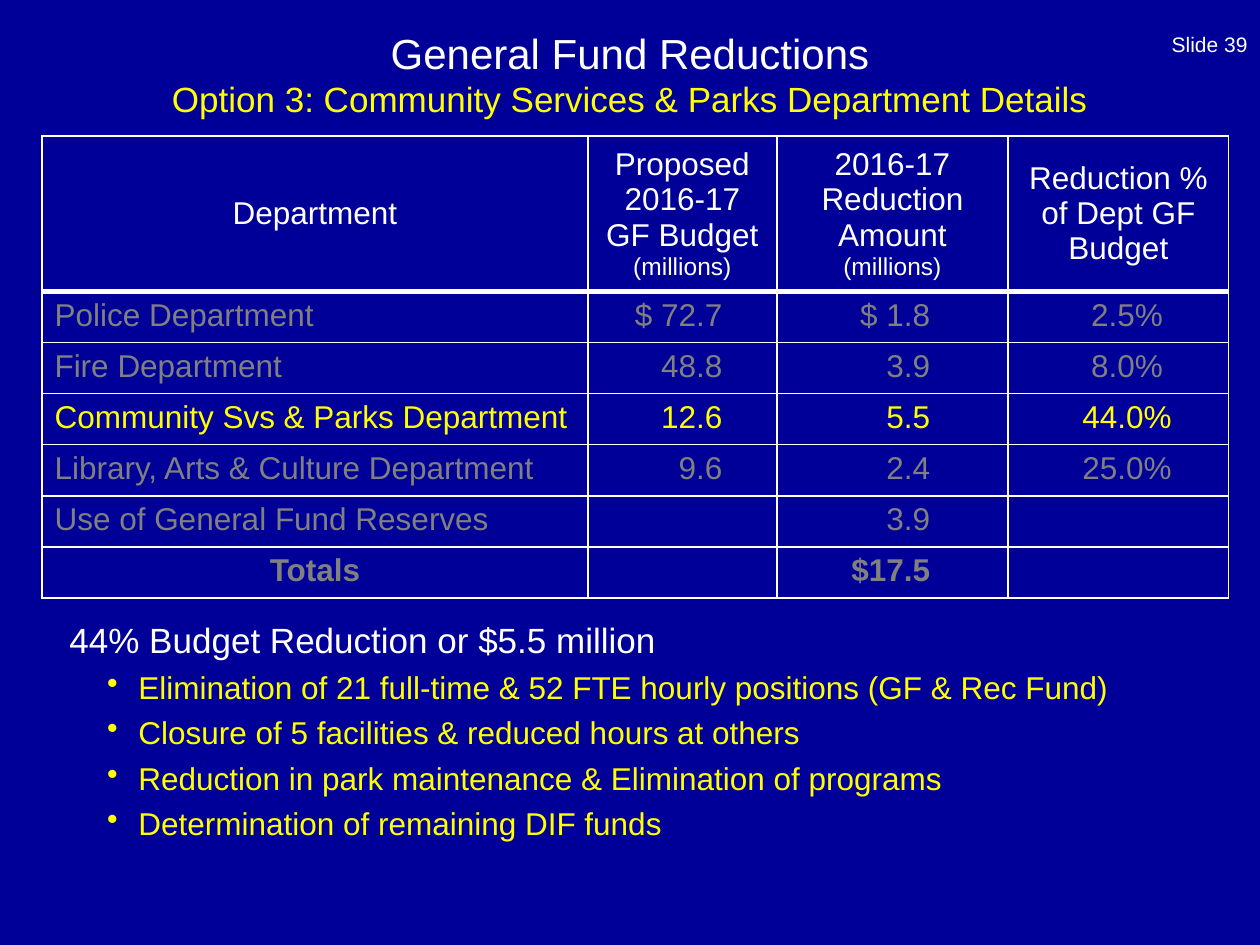
from dataclasses import dataclass

from lxml.etree import SubElement
from pptx import Presentation
from pptx.dml.color import RGBColor as Rgb
from pptx.enum.text import MSO_ANCHOR as Anchor, PP_ALIGN as Align
from pptx.oxml import parse_xml
from pptx.oxml.ns import nsdecls, qn
from pptx.util import Cm, Pt


@dataclass(frozen=True)
class Theme:
    font: str = "Arial"
    background: str = "000099"
    text: str = "FFFFFF"
    accent: str = "FFFF00"
    muted: str = "808080"
    title: int = 24
    heading: int = 20
    body: int = 18
    unit: int = 14
    small: int = 12


theme = Theme()


def add_run(paragraph, text, size, color, bold=False):
    run = paragraph.add_run()
    run.text = text
    font = run.font
    font.name, font.size, font.bold = theme.font, Pt(size), bold
    font.color.rgb = Rgb.from_string(color)


def add_text_frame(left, top, width, height, anchor):
    frame = slide.shapes.add_textbox(Cm(left), Cm(top), Cm(width), Cm(height)).text_frame
    frame.word_wrap = True
    frame.vertical_anchor = anchor
    return frame


prs = Presentation()
prs.slide_width, prs.slide_height = Cm(25.4), Cm(19.05)
slide = prs.slides.add_slide(prs.slide_layouts[6])
slide.background.fill.solid()
slide.background.fill.fore_color.rgb = Rgb.from_string(theme.background)

# Title and slide number
title = add_text_frame(0.85, 0.42, 23.7, 2.12, Anchor.MIDDLE).paragraphs[0]
title.alignment = Align.CENTER
add_run(title, "General Fund Reductions", theme.title, theme.text)
title.add_line_break()
add_run(title, "Option 3: Community Services & Parks Department Details",
        theme.heading, theme.accent)

slide_number = add_text_frame(19.48, 0, 5.92, 1.27, Anchor.BOTTOM).paragraphs[0]
slide_number.alignment = Align.RIGHT
add_run(slide_number, "Slide 39", theme.small, theme.text)

# Reductions table
headers = [
    [["Department"]],
    [["Proposed"], ["2016-17 GF Budget ", "(millions)"]],
    [["2016-17 Reduction Amount ", "(millions)"]],
    [["Reduction % of Dept GF Budget"]],
]
departments = [
    ("Police Department", "$ 72.7", "$ 1.8", "2.5%"),
    ("Fire Department", "48.8", "3.9", "8.0%"),
    ("Community Svs & Parks Department", "12.6", "5.5", "44.0%"),
    ("Library, Arts & Culture Department", "9.6", "2.4", "25.0%"),
    ("Use of General Fund Reserves", "", "3.9", ""),
    ("Totals", "", "$17.5", ""),
]
highlighted, totals = 3, len(departments)
column_widths = [11, 3.81, 4.66, 4.45]
row_heights = [2.95] + [1.03] * len(departments)
column_aligns = [Align.LEFT, Align.RIGHT, Align.RIGHT, Align.CENTER]
left_margins = [0.25, 0.25, 0.25, 0.6]
right_margins = [0.25, 1.1, 1.57, 0.25]

table = slide.shapes.add_table(
    len(row_heights), len(column_widths), Cm(0.85), Cm(2.74),
    Cm(sum(column_widths)), Cm(sum(row_heights))).table
table.first_row = table.horz_banding = False
for column, width in zip(table.columns, column_widths):
    column.width = Cm(width)
for row, height in zip(table.rows, row_heights):
    row.height = Cm(height)

for c, header in enumerate(headers):
    cell = table.cell(0, c)
    cell.vertical_anchor = Anchor.MIDDLE
    for i, parts in enumerate(header):
        line = cell.text_frame.add_paragraph() if i else cell.text_frame.paragraphs[0]
        line.alignment = Align.CENTER
        for part, size in zip(parts, (theme.body, theme.unit)):
            add_run(line, part, size, theme.text)

for r, values in enumerate(departments, start=1):
    color = theme.accent if r == highlighted else theme.muted
    for c, value in enumerate(values):
        cell = table.cell(r, c)
        cell.margin_left, cell.margin_right = Cm(left_margins[c]), Cm(right_margins[c])
        line = cell.text_frame.paragraphs[0]
        line.alignment = Align.CENTER if (r, c) == (totals, 0) else column_aligns[c]
        if value:
            add_run(line, value, theme.body, color, bold=r == totals)

for r in range(len(row_heights)):
    for c in range(len(column_widths)):
        cell = table.cell(r, c)
        cell.fill.background()
        tc_pr = cell._tc.get_or_add_tcPr()
        borders = {"lnL": 1, "lnR": 1, "lnT": 3 if r == 1 else 1, "lnB": 3 if r == 0 else 1}
        for i, (side, points) in enumerate(borders.items()):
            tc_pr.insert(i, parse_xml(
                f'<a:{side} {nsdecls("a")} w="{Pt(points)}"><a:solidFill>'
                f'<a:srgbClr val="{theme.text}"/></a:solidFill></a:{side}>'))

# Effects of the reduction
effects = [
    "Elimination of 21 full-time & 52 FTE hourly positions (GF & Rec Fund)",
    "Closure of 5 facilities & reduced hours at others",
    "Reduction in park maintenance & Elimination of programs",
    "Determination of remaining DIF funds",
]
summary = add_text_frame(0.97, 12.34, 23.93, 5.6, Anchor.TOP)
heading = summary.paragraphs[0]
heading._p.get_or_add_pPr().set("marL", str(Cm(0.18)))
add_run(heading, "44% Budget Reduction or $5.5 million", theme.heading, theme.text)
for effect in effects:
    bullet = summary.add_paragraph()
    bullet.space_before = Pt(4.4)
    properties = bullet._p.get_or_add_pPr()
    properties.set("marL", str(Cm(1.57)))
    properties.set("indent", str(-Cm(0.63)))
    SubElement(properties, qn("a:buChar"), char="•")
    add_run(bullet, effect, theme.body, theme.accent)

prs.save("out.pptx")
